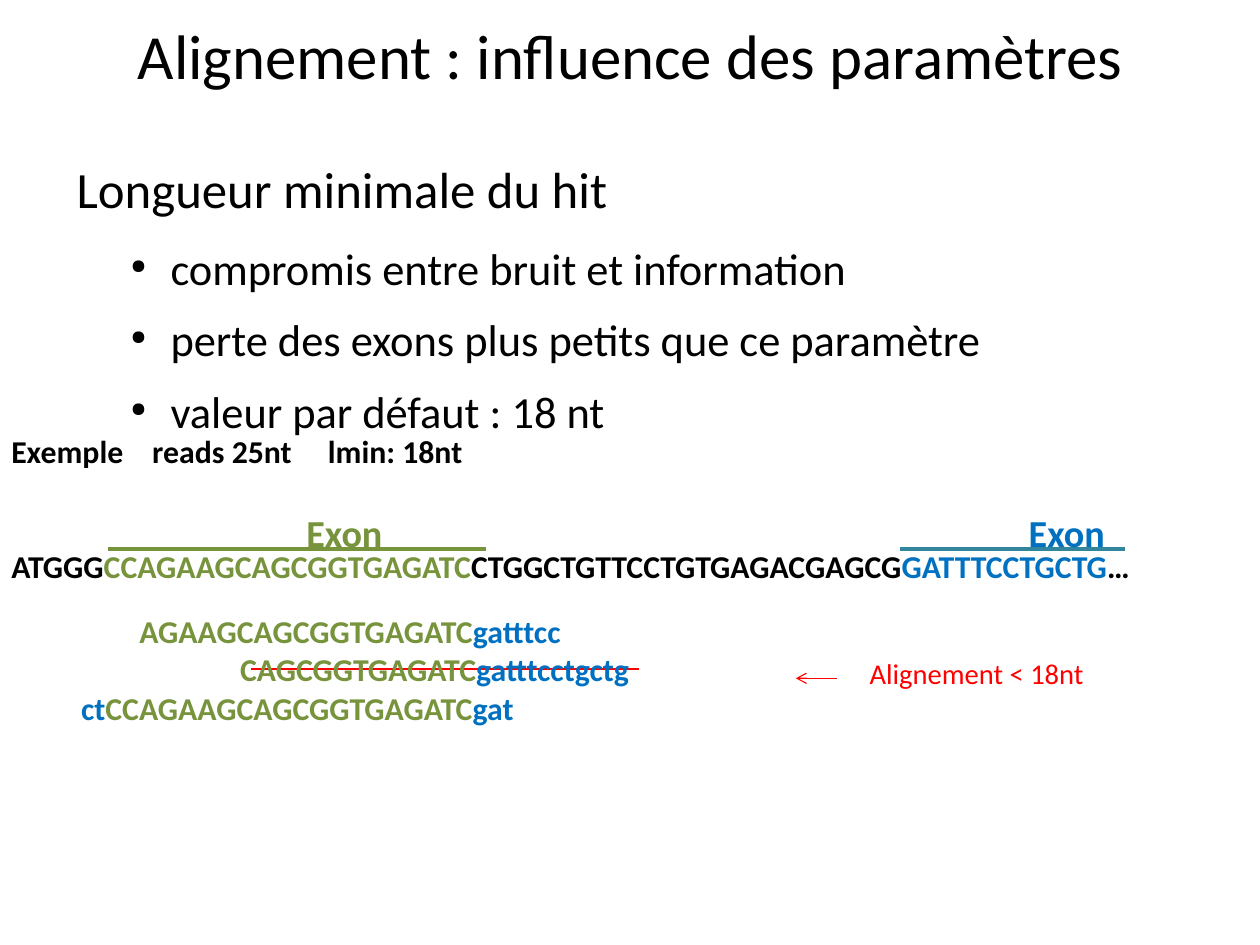
from dataclasses import dataclass
from lxml import etree
from pptx import Presentation, util as u
from pptx.dml.color import RGBColor
from pptx.enum import shapes, text
from pptx.oxml.ns import qn


@dataclass(frozen=True)
class Theme:
    font: str = "Calibri"
    bullet_font: str = "StarSymbol"
    black: str = "000000"
    green: str = "77933C"
    blue: str = "0070C0"
    teal: str = "31859C"
    red: str = "FF0000"
    title: float = 39.6
    heading: float = 32
    item: float = 28
    label: float = 24
    sequence: float = 20
    note: float = 18


class Deck:
    COLUMNS, ROWS = 24, 18

    def __init__(self, theme):
        self.theme = theme
        self.prs = Presentation()
        self.prs.slide_width, self.prs.slide_height = u.Cm(28), u.Cm(21)
        self.s = self.prs.slides.add_slide(self.prs.slide_layouts[6])

    def x(self, columns):
        return round(self.prs.slide_width * columns / self.COLUMNS)

    def y(self, rows):
        return round(self.prs.slide_height * rows / self.ROWS)

    def box(self, left, top, width, height, inset=True, wrap=True):
        sp = self.s.shapes.add_textbox(self.x(left), self.y(top), self.x(width), self.y(height))
        tf = sp.text_frame
        tf.word_wrap = wrap
        if inset:
            tf.auto_size = text.MSO_AUTO_SIZE.SHAPE_TO_FIT_TEXT
        else:
            tf.margin_left = tf.margin_right = tf.margin_top = tf.margin_bottom = 0
        return tf

    def paragraph(self, tf, parts, size, bold=False, margin=0, indent=0, before=0, after=0):
        p = tf.paragraphs[0]
        if p.runs:
            p = tf.add_paragraph()
        p.space_before, p.space_after = u.Pt(before), u.Pt(after)
        props = p._p.get_or_add_pPr()
        props.set("marL", str(self.x(margin)))
        props.set("indent", str(self.x(indent)))
        for words, color in parts:
            r = p.add_run()
            r.text = words
            r.font.name, r.font.size, r.font.bold = self.theme.font, u.Pt(size), bold
            r.font.color.rgb = RGBColor.from_string(color)
        return p

    def bullet(self, p, char, percent):
        p.level = 1
        props = p._p.get_or_add_pPr()
        etree.SubElement(props, qn("a:buSzPct"), val=str(percent * 1000))
        etree.SubElement(props, qn("a:buFont"), typeface=self.theme.bullet_font)
        etree.SubElement(props, qn("a:buChar"), char=char)

    def widen(self, r, points):
        r.font._element.set("spc", str(round(points * 100)))

    def line(self, start, end, row, color, width, arrow=False):
        sp = self.s.shapes.add_connector(
            shapes.MSO_CONNECTOR.STRAIGHT, self.x(start), self.y(row), self.x(end), self.y(row))
        sp.line.color.rgb = RGBColor.from_string(color)
        sp.line.width = u.Pt(width)
        if arrow:
            etree.SubElement(sp.line._get_or_add_ln(), qn("a:tailEnd"), type="arrow")
        etree.SubElement(sp._element.spPr, qn("a:effectLst"))

    def exon(self, start, end, label_left, line_color, text_color):
        self.line(start, end, 10.45, line_color, 2.5)
        tf = self.box(label_left, 9.6, 1.9, 1.09)
        self.paragraph(tf, [("Exon", text_color)], self.theme.label, bold=True)


def main():
    t = Theme()
    d = Deck(t)

    tf = d.box(1.72, 0.44, 20.58, 1.2, inset=False)
    tf.vertical_anchor = text.MSO_ANCHOR.MIDDLE
    p = d.paragraph(tf, [("Alignement : influence des paramètres", t.black)], t.title)
    p.alignment = text.PP_ALIGN.CENTER

    tf = d.box(1.2, 3, 21.6, 11.88, inset=False)
    d.paragraph(tf, [("Longueur minimale du hit", t.black)], t.heading,
                margin=1.02, indent=-0.76, after=14.2)
    for item in ("compromis entre bruit et information",
                 "perte des exons plus petits que ce paramètre",
                 "valeur par défaut : 18 nt"):
        p = d.paragraph(tf, [(item, t.black)], t.item, margin=2.05, indent=-0.76, after=11.3)
        d.bullet(p, "●", 45)

    tf = d.box(0, 8.12, 23.85, 3.16)
    caption = [(words, t.black) for words in ("Exemple", " ", "reads 25nt", " ", "lmin: 18nt")]
    p = d.paragraph(tf, caption, t.sequence, bold=True)
    for r, gap in zip(p.runs[1::2], (13.6, 18.1)):
        d.widen(r, gap)
    genome = [("ATGGG", t.black), ("CCAGAAGCAGCGGTGAGATC", t.green),
              ("CTGGCTGTTCCTGTGAGACGAGCG", t.black), ("GATTTCCTGCTG", t.blue), ("…", t.black)]
    d.paragraph(tf, genome, t.sequence, bold=True, before=48.4)

    d.exon(2.05, 9.26, 5.62, t.green, t.green)
    d.exon(17.14, 21.43, 19.38, t.teal, t.blue)

    tf = d.box(16.35, 12.38, 4.57, 0.87, wrap=False)
    d.paragraph(tf, [("Alignement < 18nt", t.red)], t.note)
    d.line(15.94, 15.16, 12.92, t.red, 0.75, arrow=True)
    d.line(12.17, 4.79, 12.75, t.red, 1.25)

    tf = d.box(1.2, 11.55, 15.61, 2.42)
    reads = (
        (1.24, [("AGAAGCAGCGGTGAGATC", t.green), ("gatttcc", t.blue)]),
        (3.16, [("CAGCGGTGAGATC", t.green), ("gatttcctgctg", t.blue)]),
        (0.13, [("ct", t.blue), ("CCAGAAGCAGCGGTGAGATC", t.green), ("gat", t.blue)]),
    )
    for margin, parts in reads:
        d.paragraph(tf, parts, t.sequence, bold=True, margin=margin)

    d.prs.save("out.pptx")


if __name__ == "__main__":
    main()
